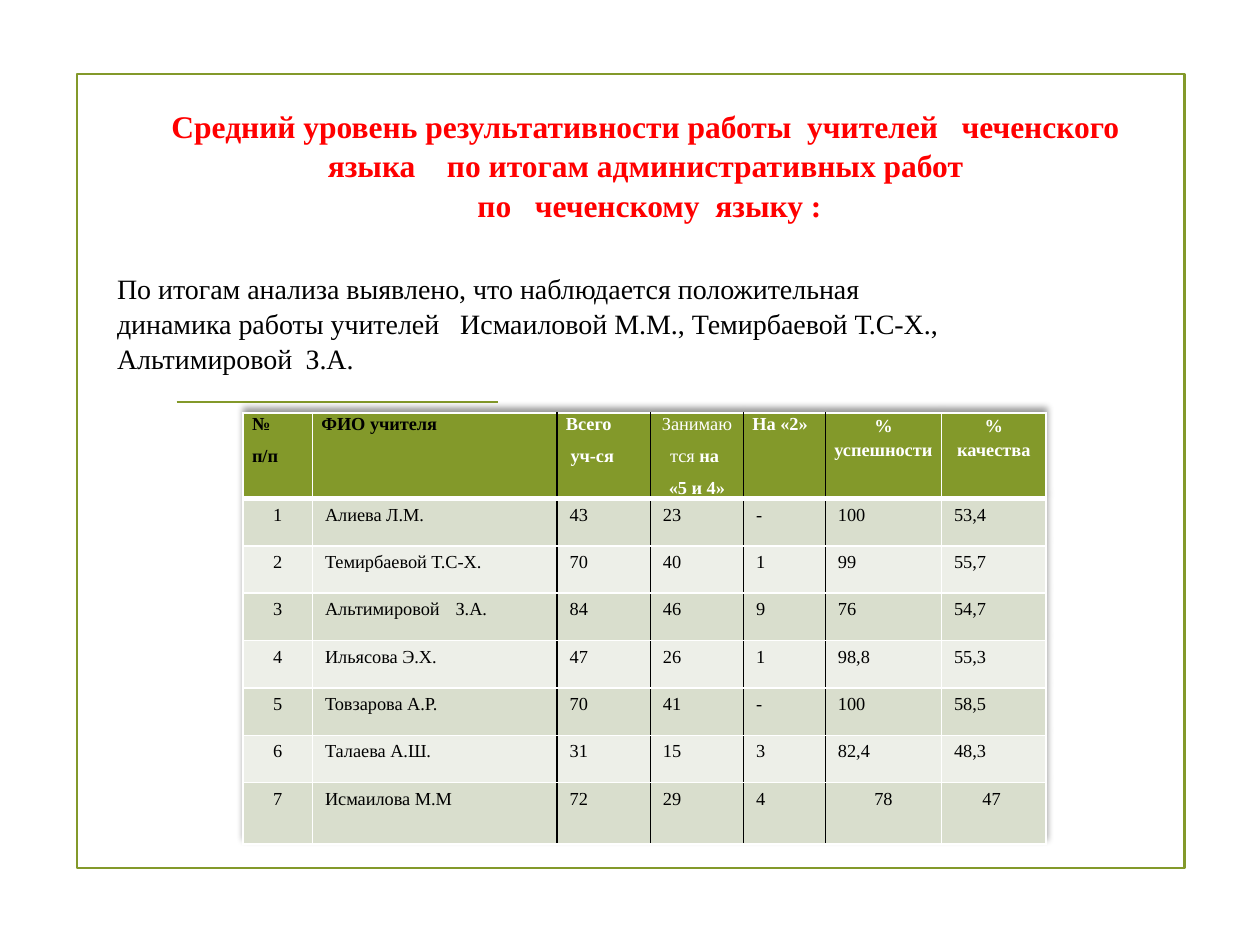
from lxml import etree
from pptx import Presentation
from pptx.dml.color import RGBColor
from pptx.enum import shapes, text
from pptx.oxml import ns, parse_xml
from pptx.util import Cm, Pt

FONT = "Times New Roman"
GREEN = RGBColor(0x83, 0x99, 0x2A)
RED = RGBColor(0xFF, 0, 0)
BLACK = RGBColor(0, 0, 0)
WHITE = RGBColor(0xFF, 0xFF, 0xFF)
BANDS = (RGBColor(0xD9, 0xDE, 0xCD), RGBColor(0xED, 0xEF, 0xE8))
CENTER, LEFT = text.PP_ALIGN.CENTER, text.PP_ALIGN.LEFT

TITLE = ("Средний уровень результативности работы  учителей   чеченского  "
         "языка    по итогам административных работ \v"
         "по   чеченскому  языку :")
SUMMARY = ("По итогам анализа выявлено, что наблюдается положительная "
           "динамика работы учителей   Исмаиловой М.М., Темирбаевой Т.С-Х., "
           "Альтимировой\tЗ.А.")

# Each heading: paragraphs of (text, bold) runs, colour, alignment, line spacing, space after
HEADINGS = [
    ([[("№", True)], [("п/п", True)]], BLACK, LEFT, 1.05, 6),
    ([[("ФИО учителя", True)]], BLACK, LEFT, 1.05, 6),
    ([[("Всего", True)], [(" уч-ся", True)]], WHITE, LEFT, 1.05, 6),
    ([[("Занимаю", False)], [("тся ", False), ("на ", True)], [("«5 и 4»", True)]],
     WHITE, CENTER, 1.05, 6),
    ([[("На «2»", True)]], WHITE, LEFT, 1.05, 6),
    ([[("% успешности", True)]], WHITE, CENTER, 1.15, 0),
    ([[("%", True)], [("качества", True)]], WHITE, CENTER, 1.15, 0),
]
TEACHERS = [
    ("1", "Алиева Л.М.", "43", "23", "-", "100", "53,4"),
    ("2", "Темирбаевой Т.С-Х.", "70", "40", "1", "99", "55,7"),
    ("3", "Альтимировой\t З.А.", "84", "46", "9", "76", "54,7"),
    ("4", "Ильясова Э.Х.", "47", "26", "1", "98,8", "55,3"),
    ("5", "Товзарова А.Р.", "70", "41", "-", "100", "58,5"),
    ("6", "Талаева А.Ш.", "31", "15", "3", "82,4", "48,3"),
    ("7", "Исмаилова М.М", "72", "29", "4", "78", "47 "),
]
COLUMNS = [1.4, 4.93, 1.88, 1.88, 1.65, 2.34, 2.11]
ROWS = [1.63] + [0.955] * 6 + [1.24]
BLACK_EDGES = range(2, 6)  # column edges drawn in black


def style(r, size, color, bold=False):
    r.font.name, r.font.size, r.font.bold = FONT, Pt(size), bold
    r.font.color.rgb = color


def set_borders(cell, col, header):
    """Draw the four cell sides; they must stand before the fill in tcPr."""
    sides = [("lnL", col in BLACK_EDGES, 1), ("lnR", col + 1 in BLACK_EDGES, 1),
             ("lnT", False, 1), ("lnB", False, 3 if header else 1)]
    tc_pr = cell._tc.get_or_add_tcPr()
    for i, (tag, black, width) in enumerate(sides):
        ln = etree.Element(ns.qn("a:" + tag), w=str(Pt(width)))
        fill = etree.SubElement(ln, ns.qn("a:solidFill"))
        etree.SubElement(fill, ns.qn("a:srgbClr"), val=str(BLACK if black else WHITE))
        tc_pr.insert(i, ln)


def fill_cell(cell, col, color, header=False):
    cell.fill.solid()
    cell.fill.fore_color.rgb = color
    set_borders(cell, col, header)


def add_results_table(s):
    frame = s.shapes.add_table(len(ROWS), len(COLUMNS), Cm(4.9), Cm(8.33),
                               Cm(sum(COLUMNS)), Cm(sum(ROWS)))
    table = frame.table
    for column, width in zip(table.columns, COLUMNS):
        column.width = Cm(width)
    for row, height in zip(table.rows, ROWS):
        row.height = Cm(height)
    shadow = parse_xml(
        f'<a:effectLst {ns.nsdecls("a")}><a:outerShdw blurRad="50800" dist="38100" '
        'dir="16200000" rotWithShape="0"><a:prstClr val="black">'
        '<a:alpha val="40000"/></a:prstClr></a:outerShdw></a:effectLst>')
    table._tbl.tblPr.insert(0, shadow)

    for col, (paragraphs, color, align, spacing, after) in enumerate(HEADINGS):
        cell = table.cell(0, col)
        fill_cell(cell, col, GREEN, header=True)
        cell.margin_left = cell.margin_right = Cm(0.18)
        cell.margin_top = cell.margin_bottom = 0
        tf = cell.text_frame
        for i, runs in enumerate(paragraphs):
            p = tf.add_paragraph() if i else tf.paragraphs[0]
            p.alignment, p.line_spacing, p.space_after = align, spacing, Pt(after)
            for words, bold in runs:
                r = p.add_run()
                r.text = words
                style(r, 10.5, color, bold)

    last = len(TEACHERS)
    for row, values in enumerate(TEACHERS, 1):
        for col, value in enumerate(values):
            cell = table.cell(row, col)
            fill_cell(cell, col, BANDS[(row - 1) % 2])
            cell.text_frame.text = value
            p = cell.text_frame.paragraphs[0]
            centred = col == 0 or (row == last and col >= 5)
            p.alignment = CENTER if centred else LEFT
            style(p.runs[0], 10.5, BLACK)


def main():
    prs = Presentation()
    prs.slide_width, prs.slide_height = Cm(25.4), Cm(19.05)
    s = prs.slides.add_slide(prs.slide_layouts[5])

    border = s.shapes.add_shape(shapes.MSO_SHAPE.RECTANGLE,
                                Cm(1.55), Cm(1.5), Cm(22.33), Cm(16))
    border.shadow.inherit = False
    border.fill.background()
    rule = s.shapes.add_connector(shapes.MSO_CONNECTOR.STRAIGHT,
                                  Cm(3.56), Cm(8.1), Cm(10.03), Cm(8.1))
    etree.SubElement(rule._element.spPr, ns.qn("a:effectLst"))
    for sp in (border, rule):
        sp.line.color.rgb = GREEN
        sp.line.width = Pt(1.25)
    # python-pptx keeps a:ln ahead of a:effectLst

    title = s.shapes.title
    title.left, title.top, title.width, title.height = Cm(2.49), Cm(3.12), Cm(21.21), Cm(2.59)
    tf = title.text_frame
    tf.text = TITLE
    tf.word_wrap, tf.auto_size = True, text.MSO_AUTO_SIZE.NONE
    tf.vertical_anchor = text.MSO_ANCHOR.BOTTOM
    tf.margin_bottom = Cm(1.2)
    p = tf.paragraphs[0]
    p.alignment, p.line_spacing = CENTER, 1.05
    for r in p.runs:
        style(r, 18, RED, True)

    add_results_table(s)

    summary = s.shapes.add_textbox(Cm(2.11), Cm(5.33), Cm(17.17), Cm(2.54))
    tf = summary.text_frame
    tf.word_wrap = True
    tf.text = SUMMARY
    p = tf.paragraphs[0]
    p.line_spacing, p.space_after = 1.04, Pt(6)
    tabs = etree.SubElement(p._p.get_or_add_pPr(), ns.qn("a:tabLst"))
    etree.SubElement(tabs, ns.qn("a:tab"), pos=str(Cm(3.8)), algn="l")
    style(p.runs[0], 16, BLACK)

    prs.save("out.pptx")


if __name__ == "__main__":
    main()
